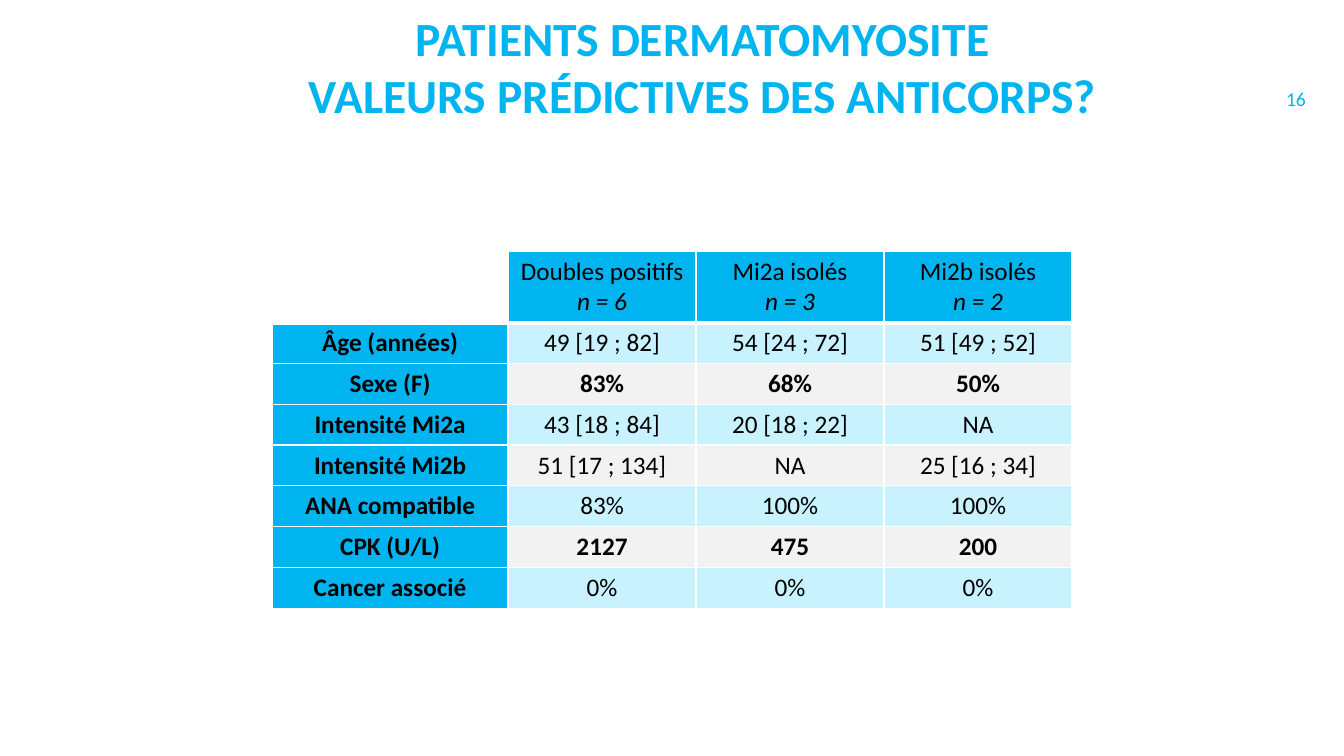
from dataclasses import dataclass

from lxml import etree
from pptx import Presentation
from pptx.dml.color import RGBColor
from pptx.enum.text import MSO_ANCHOR, PP_ALIGN
from pptx.oxml.ns import qn
from pptx.util import Pt

CENTER, LEFT = PP_ALIGN.CENTER, PP_ALIGN.LEFT
MIDDLE, BOTTOM = MSO_ANCHOR.MIDDLE, MSO_ANCHOR.BOTTOM


@dataclass(frozen=True)
class Theme:
    font: str = "Calibri"
    accent: str = "00B5EF"
    ink: str = "000000"
    border: str = "FFFFFF"
    bands: tuple[str, str] = ("C9F2FF", "F2F2F2")
    title_size: float = 34
    table_size: float = 18
    number_size: float = 14


@dataclass(frozen=True)
class Line:
    text: str
    size: float
    color: str
    bold: bool = False
    italic: bool = False


@dataclass(frozen=True)
class Caption:
    left: float
    top: float
    width: float
    height: float
    anchor: MSO_ANCHOR
    align: PP_ALIGN
    lines: list[Line]


@dataclass(frozen=True)
class Group:
    name: str
    count: str


@dataclass(frozen=True)
class Measure:
    label: str
    values: tuple[str, str, str]
    bold: bool = False


THEME = Theme()

CAPTIONS = [
    Caption(911.5, 46, 48.5, 48.5, MIDDLE, LEFT,
            [Line("16", THEME.number_size, THEME.accent)]),
    Caption(103, 13.7, 797.8, 77.8, BOTTOM, CENTER,
            [Line(text, THEME.title_size, THEME.accent, bold=True)
             for text in ("PATIENTS DERMATOMYOSITE",
                          "VALEURS PRÉDICTIVES DES ANTICORPS?")]),
]
GROUPS = [
    Group("Doubles positifs", "n = 6"),
    Group("Mi2a isolés", "n = 3"),
    Group("Mi2b isolés", "n = 2"),
]
MEASURES = [
    Measure("Âge (années)", ("49 [19 ; 82]", "54 [24 ; 72]", "51 [49 ; 52]")),
    Measure("Sexe (F)", ("83%", "68%", "50%"), bold=True),
    Measure("Intensité Mi2a", ("43 [18 ; 84]", "20 [18 ; 22]", "NA")),
    Measure("Intensité Mi2b", ("51 [17 ; 134]", "NA", "25 [16 ; 34]")),
    Measure("ANA compatible", ("83%", "100%", "100%")),
    Measure("CPK (U/L)", ("2127", "475", "200"), bold=True),
    Measure("Cancer associé", ("0%", "0%", "0%")),
]
TABLE_LEFT, TABLE_TOP = 194.4, 179.3
LABEL_WIDTH, VALUE_WIDTH = 168.5, 134.3
HEADER_HEIGHT, ROW_HEIGHT = 51.2, 29.16


def write_lines(frame, lines: list[Line], align: PP_ALIGN) -> None:
    for index, line in enumerate(lines):
        para = frame.paragraphs[0] if index == 0 else frame.add_paragraph()
        para.alignment = align
        span = para.add_run()
        span.text = line.text
        formats = {"name": THEME.font, "size": Pt(line.size),
                   "bold": line.bold, "italic": line.italic}
        for name, value in formats.items():
            setattr(span.font, name, value)
        span.font.color.rgb = RGBColor.from_string(line.color)


def add_caption(page, caption: Caption) -> None:
    box = page.shapes.add_textbox(Pt(caption.left), Pt(caption.top),
                                  Pt(caption.width), Pt(caption.height))
    box.text_frame.word_wrap = True
    box.text_frame.vertical_anchor = caption.anchor
    write_lines(box.text_frame, caption.lines, caption.align)


def add_borders(cell, bottom_width: float) -> None:
    """Rule all four sides; must run before the cell fill is set."""
    properties = cell._tc.get_or_add_tcPr()
    for side, width in (("L", 1), ("R", 1), ("T", 1), ("B", bottom_width)):
        rule = etree.SubElement(properties, qn(f"a:ln{side}"), w=str(Pt(width)))
        solid = etree.SubElement(rule, qn("a:solidFill"))
        etree.SubElement(solid, qn("a:srgbClr"), val=THEME.border)


def fill_cell(cell, lines: list[Line], color: str | None,
              bottom_width: float = 1) -> None:
    cell.vertical_anchor = MIDDLE
    add_borders(cell, bottom_width)
    if color is None:
        cell.fill.background()
    else:
        cell.fill.solid()
        cell.fill.fore_color.rgb = RGBColor.from_string(color)
    write_lines(cell.text_frame, lines, CENTER)


def table_line(text: str, bold: bool = False, italic: bool = False) -> Line:
    return Line(text, THEME.table_size, THEME.ink, bold, italic)


def add_results_table(page) -> None:
    widths = [LABEL_WIDTH] + [VALUE_WIDTH] * len(GROUPS)
    heights = [HEADER_HEIGHT] + [ROW_HEIGHT] * len(MEASURES)
    table = page.shapes.add_table(
        len(heights), len(widths), Pt(TABLE_LEFT), Pt(TABLE_TOP),
        Pt(sum(widths)), Pt(sum(heights))).table
    table.first_row = table.horz_banding = False
    for column, width in zip(table.columns, widths):
        column.width = Pt(width)
    for row, height in zip(table.rows, heights):
        row.height = Pt(height)

    fill_cell(table.cell(0, 0), [], None, bottom_width=3)
    for column, group in enumerate(GROUPS, start=1):
        lines = [table_line(group.name), table_line(group.count, italic=True)]
        fill_cell(table.cell(0, column), lines, THEME.accent, bottom_width=3)
    for row, measure in enumerate(MEASURES, start=1):
        fill_cell(table.cell(row, 0), [table_line(measure.label, bold=True)],
                  THEME.accent)
        band = THEME.bands[(row - 1) % 2]
        for column, value in enumerate(measure.values, start=1):
            fill_cell(table.cell(row, column),
                      [table_line(value, measure.bold)], band)


def main() -> None:
    deck = Presentation()
    deck.slide_width, deck.slide_height = Pt(960), Pt(540)
    page = deck.slides.add_slide(deck.slide_layouts[6])
    for caption in CAPTIONS:
        add_caption(page, caption)
    add_results_table(page)
    deck.save("out.pptx")


if __name__ == "__main__":
    main()
